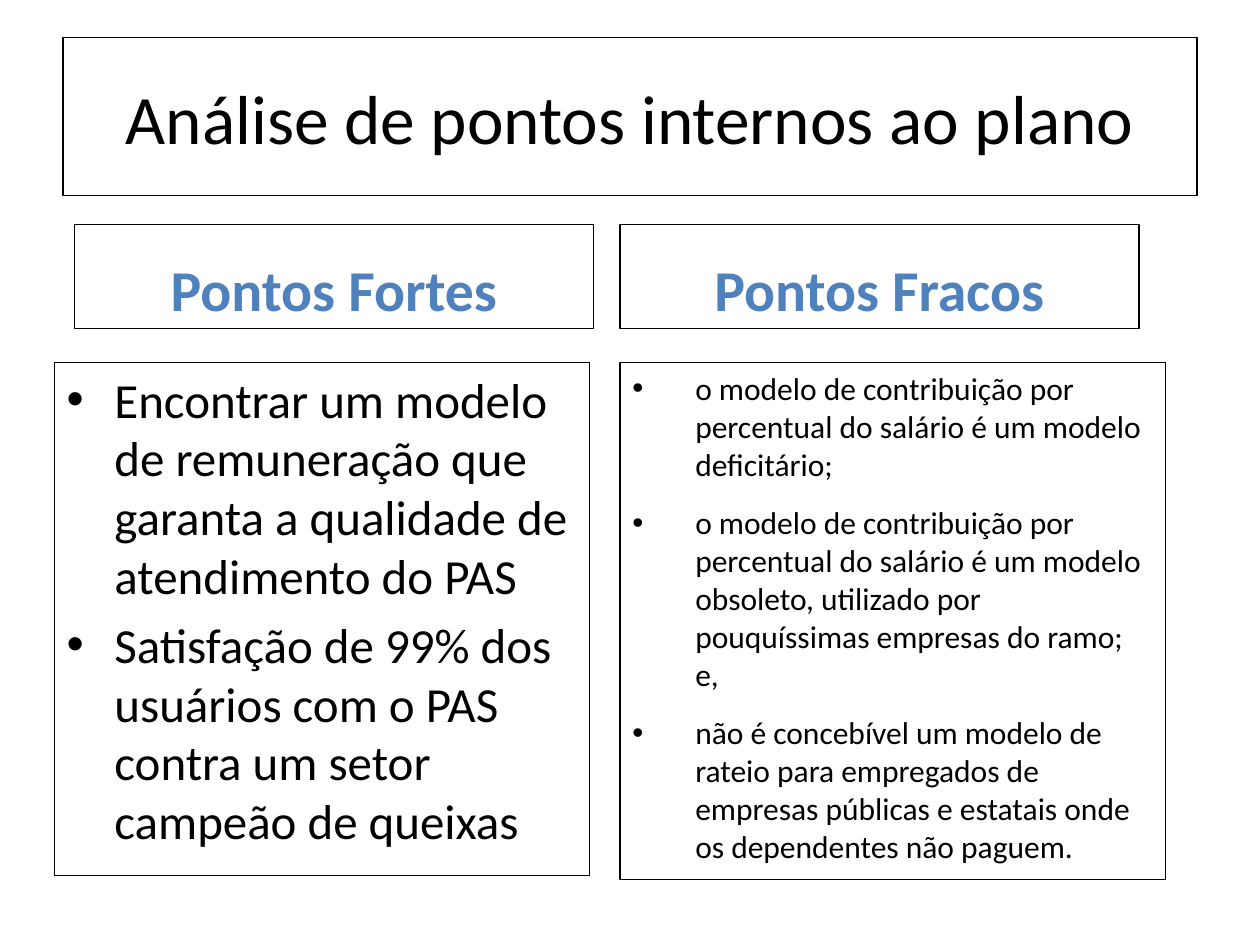
import pptx
import pptx.util
import pptx.dml.color
import pptx.enum.text
import lxml.etree
from dataclasses import dataclass

Inches = pptx.util.Inches
Pt = pptx.util.Pt
Color = pptx.dml.color.RGBColor.from_string
Align = pptx.enum.text.PP_ALIGN
Anchor = pptx.enum.text.MSO_ANCHOR


@dataclass(frozen=True)
class Theme:
    font: str = "Calibri"
    paper: str = "FFFFFF"
    ink: str = "000000"
    accent: str = "4F81BD"
    title_size: float = 39.6
    heading_size: float = 33
    strengths_size: float = 28
    weaknesses_size: float = 18
    border: float = 0.75


theme = Theme()


def fill_panel(panel, texts, size, color, anchor, bold=False):
    panel.fill.solid()
    panel.fill.fore_color.rgb = Color(theme.paper)
    panel.line.color.rgb = Color(theme.ink)
    panel.line.width = Pt(theme.border)
    frame = panel.text_frame
    frame.text = "\n".join(texts)
    frame.word_wrap = True
    frame.auto_size = pptx.enum.text.MSO_AUTO_SIZE.NONE
    frame.vertical_anchor = anchor
    for paragraph in frame.paragraphs:
        for run in paragraph.runs:
            run.font.name = theme.font
            run.font.size = Pt(size)
            run.font.bold = bold
            run.font.color.rgb = Color(color)


def add_bullet(paragraph, indent):
    properties = paragraph._p.get_or_add_pPr()
    properties.set("marL", str(Inches(indent)))
    properties.set("indent", str(-Inches(indent)))
    namespace = "{http://schemas.openxmlformats.org/drawingml/2006/main}"
    lxml.etree.SubElement(properties, namespace + "buFont", typeface="Arial")
    lxml.etree.SubElement(properties, namespace + "buChar", char="•")


presentation = pptx.Presentation()
presentation.slide_width = Inches(10)
presentation.slide_height = Inches(7.5)
slide = presentation.slides.add_slide(presentation.slide_layouts[5])

title = slide.shapes.title
title.left, title.top = Inches(0.5), Inches(0.3)
title.width, title.height = Inches(9), Inches(1.25)
fill_panel(title, ["Análise de pontos internos ao plano"],
           theme.title_size, theme.ink, Anchor.MIDDLE)
title.text_frame.paragraphs[0].alignment = Align.CENTER

strengths = [
    "Encontrar um modelo de remuneração que garanta a qualidade de atendimento do PAS",
    "Satisfação de 99% dos usuários com o PAS contra um setor campeão de queixas",
]
weaknesses = [
    "o modelo de contribuição por percentual do salário é um modelo deficitário;",
    "o modelo de contribuição por percentual do salário é um modelo obsoleto, "
    "utilizado por pouquíssimas empresas do ramo; e,",
    "não é concebível um modelo de rateio para empregados de empresas públicas "
    "e estatais onde os dependentes não paguem.",
]
columns = [
    ("Pontos Fortes", 0.59, strengths, (0.43, 2.88, 4.25, 4.07),
     theme.strengths_size, 0.38, 0.2 * theme.strengths_size, 0),
    ("Pontos Fracos", 4.92, weaknesses, (4.92, 2.88, 4.33, 4.1),
     theme.weaknesses_size, 0.5, 0, 12),
]

for name, heading_left, points, bounds, size, indent, before, after in columns:
    heading = slide.shapes.add_textbox(
        Inches(heading_left), Inches(1.78), Inches(4.12), Inches(0.83))
    fill_panel(heading, [name], theme.heading_size, theme.accent, Anchor.BOTTOM, bold=True)
    heading_line = heading.text_frame.paragraphs[0]
    heading_line.alignment = Align.CENTER
    heading_line.line_spacing = Pt(26)

    point_list = slide.shapes.add_textbox(*map(Inches, bounds))
    fill_panel(point_list, points, size, theme.ink, Anchor.TOP)
    for point in point_list.text_frame.paragraphs:
        point.space_before = Pt(before)
        point.space_after = Pt(after)
        add_bullet(point, indent)

presentation.save("out.pptx")
